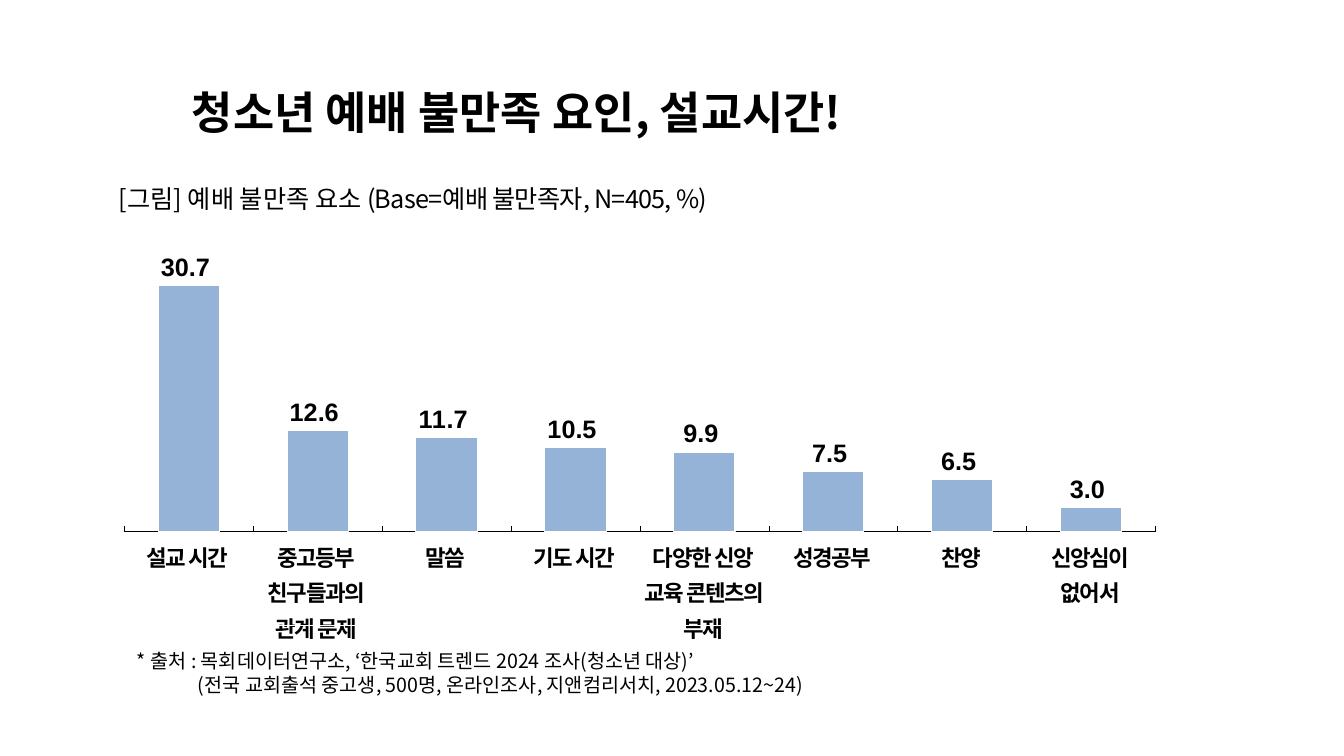
from lxml import etree
from pptx import Presentation
from pptx.chart.data import CategoryChartData
from pptx.dml.color import RGBColor
from pptx.enum.chart import XL_CHART_TYPE, XL_LABEL_POSITION, XL_TICK_LABEL_POSITION, XL_TICK_MARK
from pptx.enum.text import MSO_AUTO_SIZE, PP_ALIGN
from pptx.oxml.ns import qn
from pptx.util import Emu, Pt

COLUMN = XL_CHART_TYPE.COLUMN_CLUSTERED
OUTSIDE_END = XL_LABEL_POSITION.OUTSIDE_END
NO_LABELS = XL_TICK_LABEL_POSITION.NONE
TICK_IN, TICK_OUT = XL_TICK_MARK.INSIDE, XL_TICK_MARK.OUTSIDE
GROW = MSO_AUTO_SIZE.SHAPE_TO_FIT_TEXT
CENTER = PP_ALIGN.CENTER

COLORS = {"text": "000000", "bar": "95B3D7", "bar_edge": "FFFFFF"}
KOREAN_FONT = "Noto Sans CJK KR"
PX = 914400 / 100.8


def px(length):
    return Emu(round(length * PX))


def add_run(paragraph, text, size, bold=False, spacing=0):
    """Add a run in the Korean font; spacing is in hundredths of a point."""
    run = paragraph.add_run()
    run.text = text
    for name, value in {"size": Pt(size), "bold": bold, "name": KOREAN_FONT}.items():
        setattr(run.font, name, value)
    run.font.color.rgb = RGBColor.from_string(COLORS["text"])
    properties = run._r.get_or_add_rPr()
    etree.SubElement(properties, qn("a:ea"), typeface=KOREAN_FONT)
    if spacing:
        properties.set("spc", str(spacing))


prs = Presentation()
prs.slide_width, prs.slide_height = px(1344), px(756)
slide = prs.slides.add_slide(prs.slide_layouts[6])

# Title, chart caption and source note: box, wrap, size, bold, lines of (text, spacing)
texts = [
    ((182, 80, 1126, 65), False, 32, True, [[("청소년 예배 불만족 요인, 설교시간!", 0)]]),
    ((109, 178, 1020, 40), True, 18, False,
     [[("[그림] 예배 불만족 요소 ", 0), ("(Base=예배 불만족자, N=405, %)", -50)]]),
    ((127, 644, 977, 57), True, 14, False,
     [[("* 출처 : 목회데이터연구소, ‘한국교회 트렌드 2024 조사(청소년 대상)’", 0)],
      [("(전국 교회출석 중고생, 500명, 온라인조사, 지앤컴리서치, 2023.05.12~24)", 0)]]),
]
for box, wrap, size, bold, lines in texts:
    frame = slide.shapes.add_textbox(*map(px, box)).text_frame
    frame.word_wrap = wrap
    frame.auto_size = GROW
    for index, line in enumerate(lines):
        paragraph = frame.add_paragraph() if index else frame.paragraphs[0]
        if index:
            paragraph._p.get_or_add_pPr().set("marL", str(px(61)))
        for text, spacing in line:
            add_run(paragraph, text, size, bold, spacing)

# Column chart of dissatisfaction factors
data = CategoryChartData(number_format="0.0")
data.categories = [str(number) for number in range(1, 9)]
data.add_series("Series 1", (30.7, 12.6, 11.7, 10.5, 9.9, 7.5, 6.5, 3))
chart = slide.shapes.add_chart(COLUMN, *map(px, (103, 197, 1074, 345)), data).chart
chart.has_legend = False
chart.has_title = False
for name, value in {"name": "Arial", "size": Pt(9), "bold": True}.items():
    setattr(chart.font, name, value)
chart.font.color.rgb = RGBColor.from_string(COLORS["text"])

factor_axis, percent_axis = chart.category_axis, chart.value_axis
axis_formats = [
    (factor_axis, {"major_tick_mark": TICK_IN}),
    (percent_axis, {"major_tick_mark": TICK_OUT, "minimum_scale": 0, "maximum_scale": 40}),
]
for axis, formats in axis_formats:
    for name, value in formats.items():
        setattr(axis, name, value)
    axis.has_major_gridlines = False
    axis.tick_label_position = NO_LABELS
factor_axis.format.line.color.rgb = RGBColor.from_string(COLORS["text"])
factor_axis.format.line.width = Pt(0.25)
percent_axis.format.line.fill.background()
percent_axis.tick_labels.number_format = "###0.0"
percent_axis.tick_labels.number_format_is_linked = False

plot = chart.plots[0]
plot.gap_width, plot.overlap, plot.vary_by_categories = 110, -5, False
bars = plot.series[0]
bars.format.fill.solid()
bars.format.fill.fore_color.rgb = RGBColor.from_string(COLORS["bar"])
bars.format.line.color.rgb = RGBColor.from_string(COLORS["bar_edge"])
bars.format.line.width = Pt(0.75)
labels = bars.data_labels
label_formats = {"show_value": True, "position": OUTSIDE_END,
                 "number_format": "0.0_ ", "number_format_is_linked": False}
for name, value in label_formats.items():
    setattr(labels, name, value)
labels.font.size = Pt(18)
labels.font.bold = True

plot_area = chart._chartSpace.chart.plotArea
for old_layout in plot_area.findall(qn("c:layout")):
    plot_area.remove(old_layout)
layout = etree.Element(qn("c:layout"))
plot_area.insert(0, layout)
manual = etree.SubElement(layout, qn("c:manualLayout"))
for tag, value in {"layoutTarget": "inner", "xMode": "edge", "yMode": "edge",
                   "x": "0.02", "y": "0.04", "w": "0.96", "h": "0.93"}.items():
    etree.SubElement(manual, qn(f"c:{tag}"), val=value)

# Factor names below the columns
factors = [
    ["설교 시간"], ["중고등부", "친구들과의", "관계 문제"], ["말씀"], ["기도 시간"],
    ["다양한 신앙", "교육 콘텐츠의 부재"], ["성경공부"], ["찬양"], ["신앙심이", "없어서"],
]
factor_table = slide.shapes.add_table(
    1, len(factors), *map(px, (123, 536, 129 * len(factors), 47))).table
factor_table.first_row = False
factor_table.horz_banding = False
for column, lines in enumerate(factors):
    cell = factor_table.cell(0, column)
    cell.fill.background()
    for name, value in {"margin_left": 1, "margin_right": 1,
                        "margin_top": 1, "margin_bottom": 0}.items():
        setattr(cell, name, px(value))
    for index, line in enumerate(lines):
        paragraph = cell.text_frame.add_paragraph() if index else cell.text_frame.paragraphs[0]
        paragraph.alignment = CENTER
        paragraph.line_spacing = 1.1
        add_run(paragraph, line, 16, True, -100)

prs.save("out.pptx")
